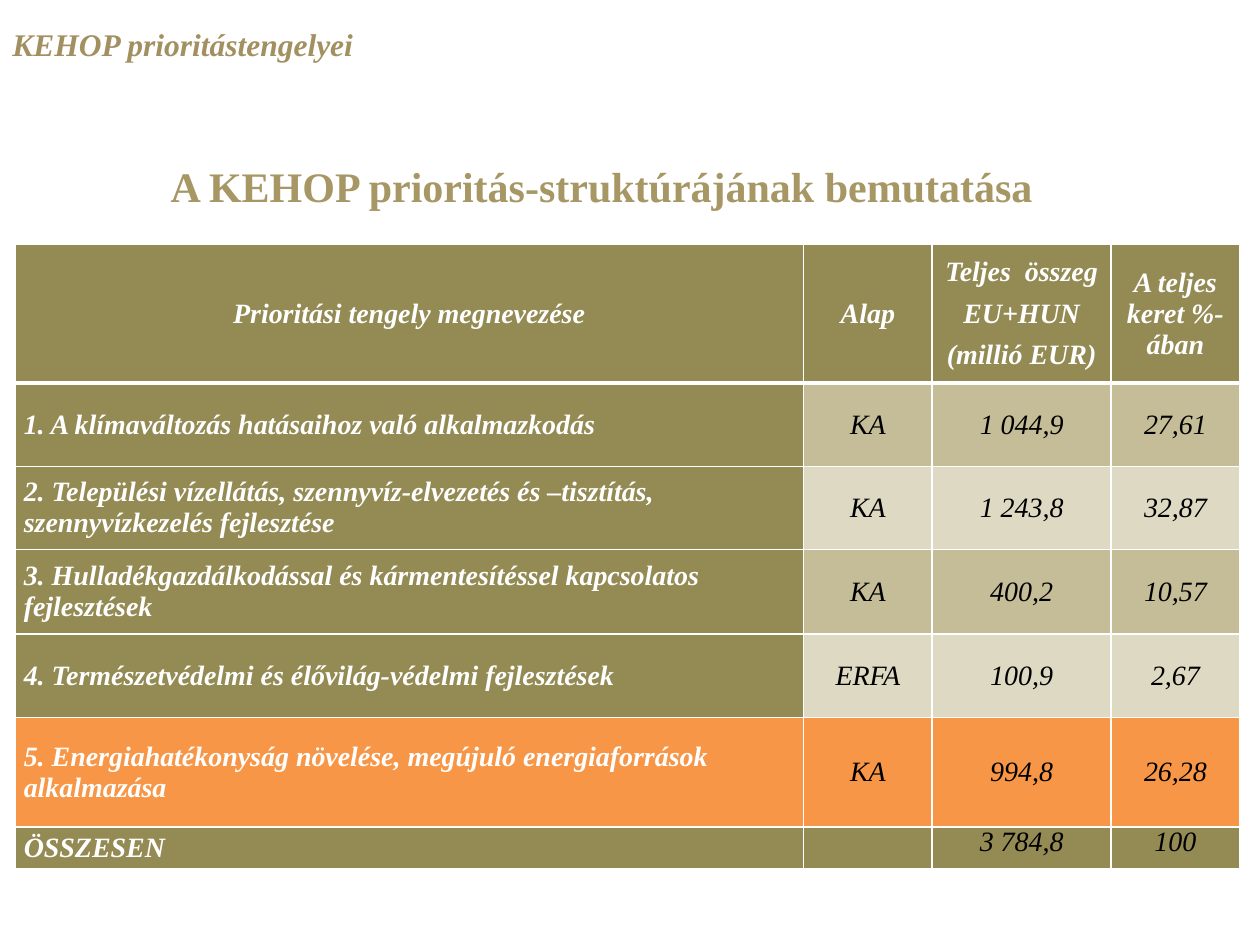
from pptx import Presentation
from pptx.dml.color import RGBColor as Rgb
from pptx.enum.text import MSO_ANCHOR as Anchor, MSO_AUTO_SIZE as Auto, PP_ALIGN as Align
from pptx.oxml.ns import qn
from pptx.util import Cm, Pt
from lxml.etree import SubElement as Sub

FONT = "Times New Roman"
OLIVE, SAND, PALE, ORANGE = "948A54", "C4BD97", "DDD9C3", "F79646"
WHITE, BLACK = "FFFFFF", "000000"
WIDTHS = [15.9, 2.59, 3.61, 2.59]
HEIGHTS = [2.79, 1.68, 1.68, 1.7, 1.68, 2.21, 0.84]
ROWS = [
    ["Prioritási tengely megnevezése", "Alap",
     "Teljes  összeg\nEU+HUN\n(millió EUR)", "A teljes keret %-ában"],
    ["1. A klímaváltozás hatásaihoz való alkalmazkodás", "KA", "1 044,9", "27,61"],
    ["2. Települési vízellátás, szennyvíz-elvezetés és –tisztítás, "
     "szennyvízkezelés fejlesztése", "KA", "1 243,8", "32,87"],
    ["3. Hulladékgazdálkodással és kármentesítéssel kapcsolatos fejlesztések",
     "KA", "400,2", "10,57"],
    ["4. Természetvédelmi és élővilág-védelmi fejlesztések", "ERFA", "100,9", "2,67"],
    ["5. Energiahatékonyság növelése, megújuló energiaforrások alkalmazása",
     "KA", "994,8", "26,28"],
    ["ÖSSZESEN", "", "3 784,8", "100"],
]
# Fill of the first column and of the others, row by row
FILLS = [(OLIVE, OLIVE), (OLIVE, SAND), (OLIVE, PALE), (OLIVE, SAND),
         (OLIVE, PALE), (ORANGE, ORANGE), (OLIVE, OLIVE)]


def color(hexa):
    return Rgb.from_string(hexa)


def style(font, size, hexa, bold=True, italic=True):
    font.name, font.size = FONT, Pt(size)
    font.bold, font.italic = bold, italic
    font.color.rgb = color(hexa)


def add_run(para, text, *look):
    run = para.add_run()
    run.text = text
    style(run.font, *look)


def add_label(slide, box, text, *look, align=Align.LEFT, spacing=1.0):
    frame = slide.shapes.add_textbox(*map(Cm, box)).text_frame
    frame.word_wrap = True
    frame.auto_size = Auto.SHAPE_TO_FIT_TEXT
    para = frame.paragraphs[0]
    para.alignment, para.line_spacing = align, spacing
    add_run(para, text, *look)


def set_edges(cell, head):
    """Draw white borders, with a thick one below the header."""
    props = cell._tc.get_or_add_tcPr()
    for side in "LRTB":
        width = 3 if head and side == "B" else 1
        line = Sub(props, qn(f"a:ln{side}"), w=str(Pt(width)))
        fill = Sub(line, qn("a:solidFill"))
        Sub(fill, qn("a:srgbClr"), val=WHITE)


def fill_cell(cell, text, row, col):
    head, last = row == 0, row == len(ROWS) - 1
    set_edges(cell, head)
    cell.fill.solid()
    cell.fill.fore_color.rgb = color(FILLS[row][col > 0])
    cell.margin_left = cell.margin_right = Cm(0.18)
    cell.margin_top = cell.margin_bottom = Cm(0)
    cell.vertical_anchor = Anchor.TOP if last and col > 1 else Anchor.MIDDLE
    strong = head or col == 0
    look = (16, WHITE if strong else BLACK, strong)
    for i, part in enumerate(text.split("\n")):
        para = cell.text_frame.add_paragraph() if i else cell.text_frame.paragraphs[0]
        para.alignment = Align.CENTER if head or col else Align.LEFT
        if i:
            para.space_before = Pt(3)
        if head or col in (1, 3):
            para.space_after = Pt(3)
        elif col == 0:
            para.space_after = Pt(6)
        if part:
            add_run(para, part, *look)
        else:
            style(para.font, *look)


def add_grid(slide):
    frame = slide.shapes.add_table(
        len(ROWS), len(WIDTHS), Cm(0.3), Cm(4.93), Cm(sum(WIDTHS)), Cm(sum(HEIGHTS)))
    table = frame.table
    for col, width in zip(table.columns, WIDTHS):
        col.width = Cm(width)
    for row, height in zip(table.rows, HEIGHTS):
        row.height = Cm(height)
    for r, texts in enumerate(ROWS):
        for c, text in enumerate(texts):
            fill_cell(table.cell(r, c), text, r, c)


def main():
    deck = Presentation()
    deck.slide_width, deck.slide_height = Cm(25.4), Cm(19.05)
    slide = deck.slides.add_slide(deck.slide_layouts[6])
    add_label(slide, (1.02, 3.12, 22.22, 1.3), "A KEHOP prioritás-struktúrájának bemutatása",
              24, "A69765", True, False, align=Align.CENTER)
    add_grid(slide)
    add_label(slide, (0, 0, 9.09, 1.27), "KEHOP prioritástengelyei",
              18, "A29061", spacing=1.5)
    deck.save("out.pptx")


if __name__ == "__main__":
    main()
